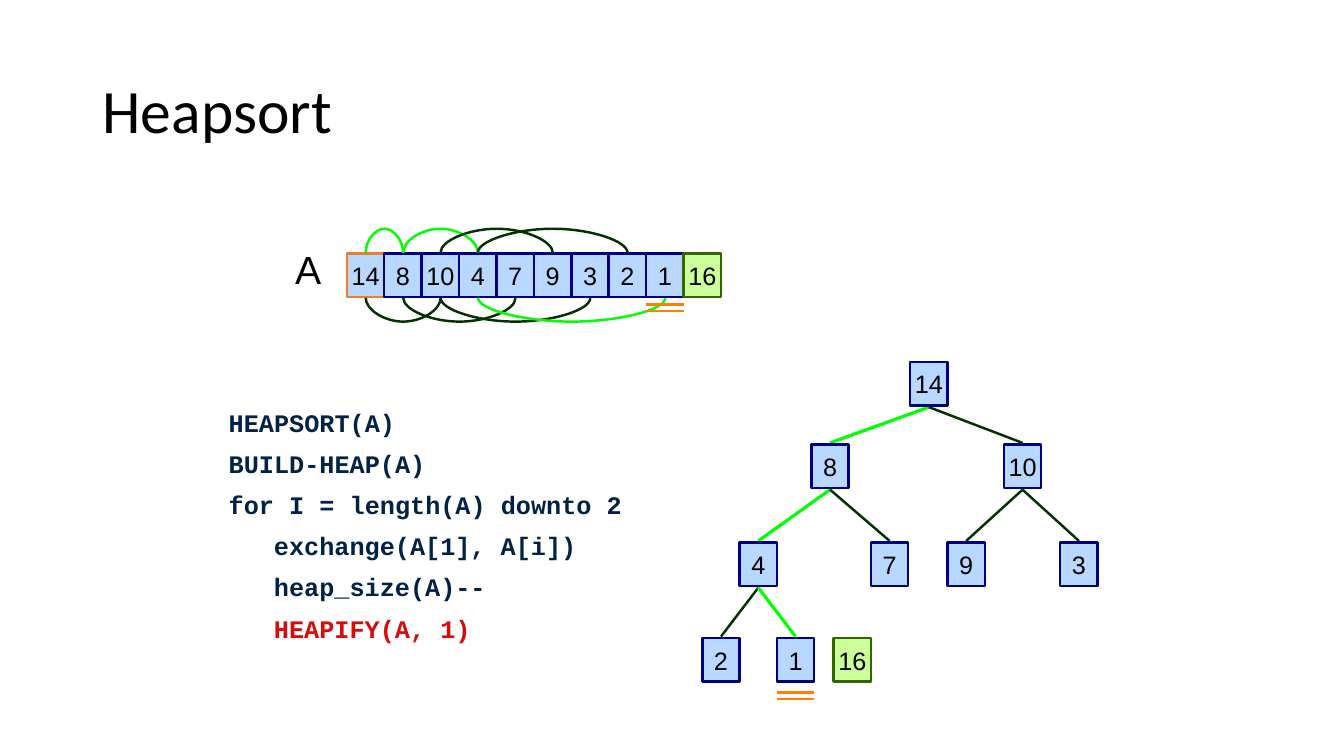
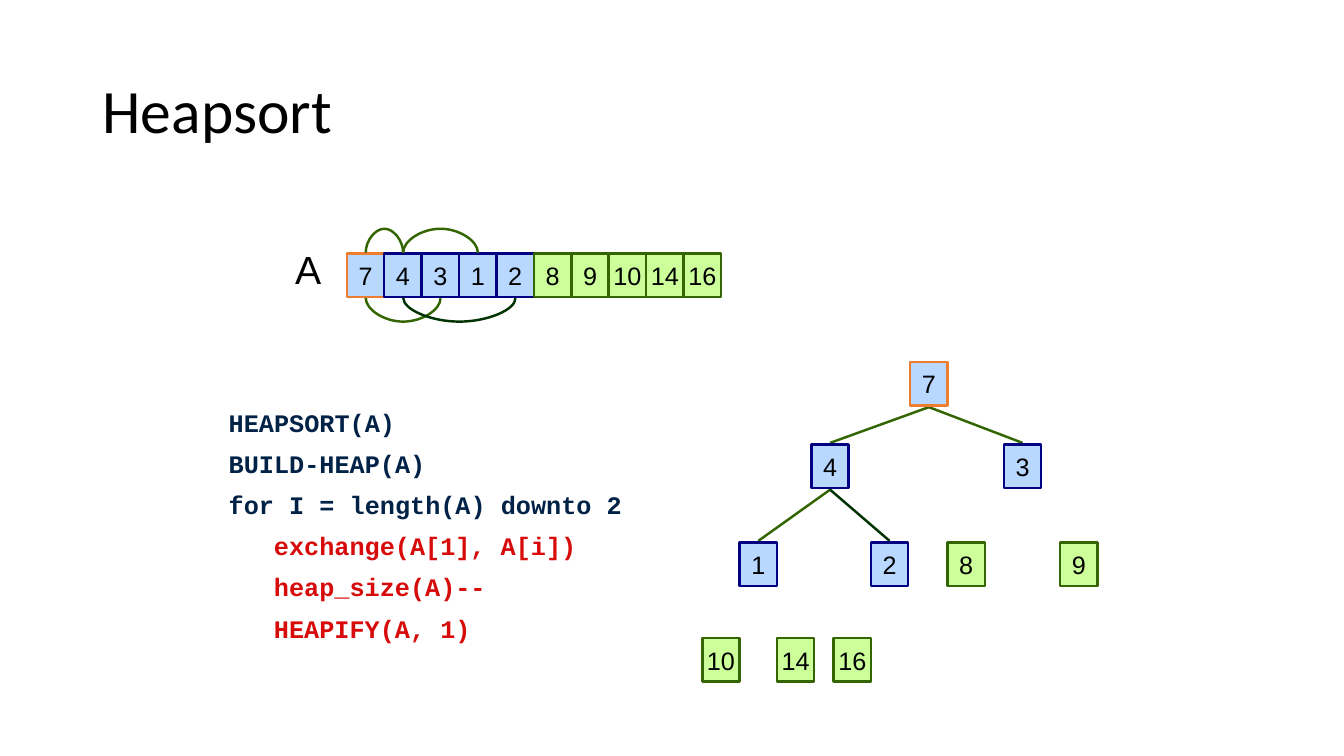
from dataclasses import dataclass

from lxml import etree
from pptx import Presentation
from pptx.dml.color import RGBColor
from pptx.enum.shapes import MSO_CONNECTOR, MSO_SHAPE
from pptx.enum.text import MSO_ANCHOR, MSO_AUTO_SIZE, PP_ALIGN
from pptx.oxml.ns import qn
from pptx.util import Cm, Pt

BLACK = RGBColor(0x00, 0x00, 0x00)
NAVY = RGBColor(0x00, 0x00, 0x80)
SKY = RGBColor(0xB8, 0xD8, 0xFF)
LIME = RGBColor(0xCC, 0xFF, 0x99)
OLIVE = RGBColor(0x33, 0x66, 0x00)
FOREST = RGBColor(0x00, 0x33, 0x00)
NEON = RGBColor(0x00, 0xFF, 0x00)
ROOT_ORANGE = RGBColor(0xED, 0x7D, 0x31)
MARK_ORANGE = RGBColor(0xFF, 0x80, 0x00)
CODE_BLUE = RGBColor(0x00, 0x22, 0x46)
CODE_RED = RGBColor(0xD6, 0x0B, 0x0A)

RECTANGLE = MSO_SHAPE.RECTANGLE
STRAIGHT, CURVE = MSO_CONNECTOR.STRAIGHT, MSO_CONNECTOR.CURVE
LEFT, CENTER = PP_ALIGN.LEFT, PP_ALIGN.CENTER
MIDDLE = MSO_ANCHOR.MIDDLE
NO_FIT = MSO_AUTO_SIZE.NONE

TITLE_BOX = (2.33, 1.02, 29.21, 3.68)
LABEL_BOX = (7.19, 6.05, 1.17, 1.45)
CODE_BOX = (5.51, 10.21, 12.67, 8.2)
ARRAY_BOX = (8.74, 6.39, 9.43, 1.1)
TREE_BOX = (17.7, 9.12, 9.96, 8.06)

NODE_WIDTH, NODE_HEIGHT = 0.94, 1.1
NODE_LEFTS = (5.24, 2.75, 7.6, 0.94, 4.25, 6.18, 9.02, 0, 1.88, 3.31)
LEVEL_TOPS = (0, 2.08, 4.55, 6.96)
LINE_WIDTH, PATH_WIDTH = 1.75, 2.25
ARC_DEPTH, ARC_BASE, ARC_GAP = 0.6, 0.01, 0.02
EDGE_GAP = 0.04
MARK_SPACING = 0.16

CODE_INDENT = 1.14
CODE_LINES = (
    (0, "HEAPSORT(A)"),
    (0, "BUILD-HEAP(A)"),
    (0, "for I = length(A) downto 2"),
    (1, "exchange(A[1], A[i])"),
    (1, "heap_size(A)--"),
    (1, "HEAPIFY(A, 1)"),
)


@dataclass
class HeapStep:
    """State of the heap shown on one slide."""

    values: tuple
    heap_size: int
    edge_colors: dict
    red_lines: int
    tree_root_line: RGBColor
    marked: tuple


STEPS = (
    HeapStep((14, 8, 10, 4, 7, 9, 3, 2, 1, 16), 9,
             {1: NEON, 3: NEON, 8: NEON}, 1, NAVY, (8,)),
    HeapStep((7, 4, 3, 1, 2, 8, 9, 10, 14, 16), 5,
             {1: OLIVE, 2: OLIVE, 3: OLIVE}, 3, ROOT_ORANGE, ()),
)


def place(shape, box):
    """Move a shape to a box given in centimetres."""
    shape.left, shape.top, shape.width, shape.height = map(Cm, box)


def write(para, text, size, font, color, bold=False):
    """Add one formatted run to a paragraph."""
    span = para.add_run()
    span.text = text
    span.font.size = Pt(size)
    span.font.name = font
    span.font.bold = bold
    span.font.color.rgb = color


def add_line(page, kind, begin, end, color, width=LINE_WIDTH):
    """Draw a connector without shadow between two points."""
    line = page.shapes.add_connector(kind, *map(Cm, begin + end))
    line.line.color.rgb = color
    line.line.width = Pt(width)
    etree.SubElement(line._element.spPr, qn("a:effectLst"))
    return line


def add_arc(page, start, end, y, above, color):
    """Draw a curved connector that bulges above or below a level."""
    middle, half = (start + end) / 2, (end - start) / 2
    if above:
        points = (middle, y + half), (middle + ARC_BASE, y - half)
    else:
        points = (middle + ARC_BASE, y - half), (middle, y + half)
    arc = add_line(page, CURVE, *points, color)
    arc.rotation = 90 if above else 270
    bend = round(ARC_DEPTH / ARC_BASE * 100000) * (-1 if above else 1)
    guides = arc._element.spPr.find(qn("a:prstGeom")).find(qn("a:avLst"))
    etree.SubElement(guides, qn("a:gd"), name="adj1", fmla=f"val {bend}")


def add_node(page, box, step, index, root_line):
    """Draw one heap value as a square, coloured by its state."""
    node = page.shapes.add_shape(RECTANGLE, *map(Cm, box))
    node.shadow.inherit = False
    in_heap = index < step.heap_size
    node.fill.solid()
    node.fill.fore_color.rgb = SKY if in_heap else LIME
    border = NAVY if in_heap else OLIVE
    node.line.color.rgb = border if index else root_line
    node.line.width = Pt(LINE_WIDTH)
    frame = node.text_frame
    frame.word_wrap = False
    frame.vertical_anchor = MIDDLE
    frame.margin_left = frame.margin_right = 0
    para = frame.paragraphs[0]
    para.alignment = CENTER
    write(para, str(step.values[index]), 18, "Arial", BLACK)


def add_marks(page, box, gap):
    """Draw a double underline below a node."""
    left, top, width, height = box
    for row in range(2):
        y = top + height + gap + row * MARK_SPACING
        add_line(page, STRAIGHT, (left, y), (left + width, y), MARK_ORANGE)


def add_title(page, box):
    """Fill the title placeholder."""
    title = page.shapes.title
    place(title, box)
    title.text_frame.vertical_anchor = MIDDLE
    para = title.text_frame.paragraphs[0]
    para.alignment = LEFT
    para.line_spacing = 0.9
    write(para, "Heapsort", 44, "Calibri", BLACK)


def add_label(page, box):
    """Write the name of the array."""
    label = page.shapes.add_textbox(*map(Cm, box))
    label.text_frame.word_wrap = False
    write(label.text_frame.paragraphs[0], "A", 28, "Arial", BLACK)


def add_code(page, box, red_lines):
    """Fill the body placeholder with pseudocode, its last lines in red."""
    body = page.placeholders[1]
    place(body, box)
    frame = body.text_frame
    frame.auto_size = NO_FIT
    first_red = len(CODE_LINES) - red_lines
    for number, (level, text) in enumerate(CODE_LINES):
        para = frame.add_paragraph() if number else frame.paragraphs[0]
        para.line_spacing = 0.9
        para.space_before = Pt(10)
        props = para._p.get_or_add_pPr()
        props.set("marL", str(Cm(level * CODE_INDENT)))
        props.set("indent", "0")
        etree.SubElement(props, qn("a:buNone"))
        color = CODE_RED if number >= first_red else CODE_BLUE
        write(para, text, 18, "Courier New", color, bold=True)


def add_array(page, box, step):
    """Draw the array with arcs from each parent to its children."""
    left, top, width, height = box
    cell = width / len(step.values)
    boxes = [(left + i * cell, top, cell, height) for i in range(len(step.values))]
    for index, node_box in enumerate(boxes):
        add_node(page, node_box, step, index, ROOT_ORANGE)
    centers = [x + cell / 2 for x, *_ in boxes]
    for child in range(1, step.heap_size):
        above = child % 2 == 1
        y = top - ARC_GAP if above else top + height + ARC_GAP
        color = step.edge_colors.get(child, FOREST)
        add_arc(page, centers[(child - 1) // 2], centers[child], y, above, color)
    for index in step.marked:
        add_marks(page, boxes[index], 0.18)


def add_tree(page, box, step):
    """Draw the heap as a binary tree."""
    left, top = box[:2]
    boxes = [
        (left + x, top + LEVEL_TOPS[(i + 1).bit_length() - 1], NODE_WIDTH, NODE_HEIGHT)
        for i, x in enumerate(NODE_LEFTS)
    ]
    for child in range(1, step.heap_size):
        parent_x, parent_y = boxes[(child - 1) // 2][:2]
        child_x, child_y = boxes[child][:2]
        color = step.edge_colors.get(child, FOREST)
        add_line(page, STRAIGHT,
                 (parent_x + NODE_WIDTH / 2, parent_y + NODE_HEIGHT + EDGE_GAP),
                 (child_x + NODE_WIDTH / 2, child_y - EDGE_GAP),
                 color, PATH_WIDTH if color == NEON else LINE_WIDTH)
    for index, node_box in enumerate(boxes):
        add_node(page, node_box, step, index, step.tree_root_line)
    for index in step.marked:
        add_marks(page, boxes[index], 0.27)


def add_step_slide(deck, step):
    """Build one slide that shows a step of heapsort."""
    page = deck.slides.add_slide(deck.slide_layouts[1])
    add_title(page, TITLE_BOX)
    add_label(page, LABEL_BOX)
    add_code(page, CODE_BOX, step.red_lines)
    add_array(page, ARRAY_BOX, step)
    add_tree(page, TREE_BOX, step)


def main():
    """Build and save the deck."""
    deck = Presentation()
    deck.slide_width, deck.slide_height = Cm(33.87), Cm(19.05)
    for step in STEPS:
        add_step_slide(deck, step)
    deck.save("out.pptx")


if __name__ == "__main__":
    main()
